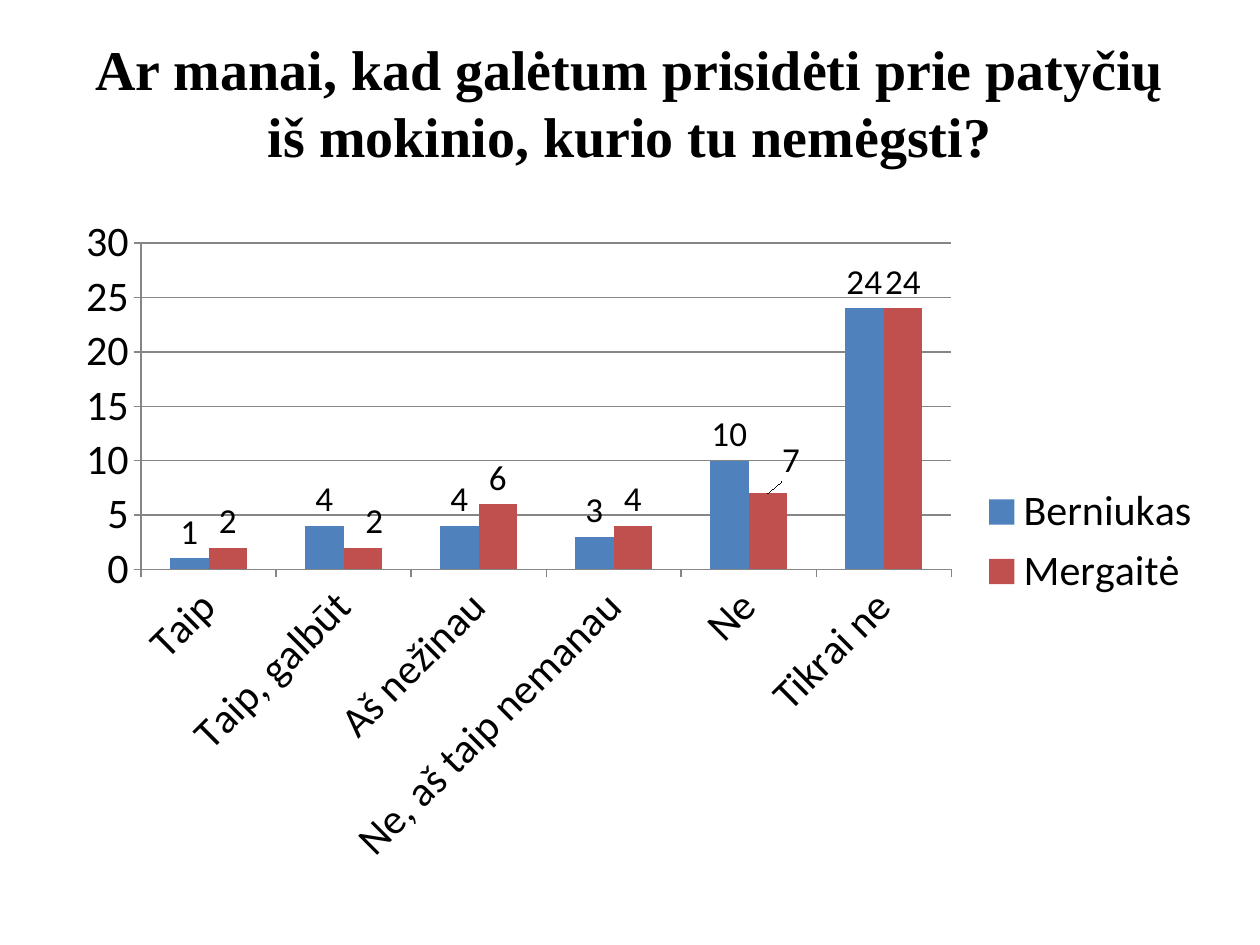
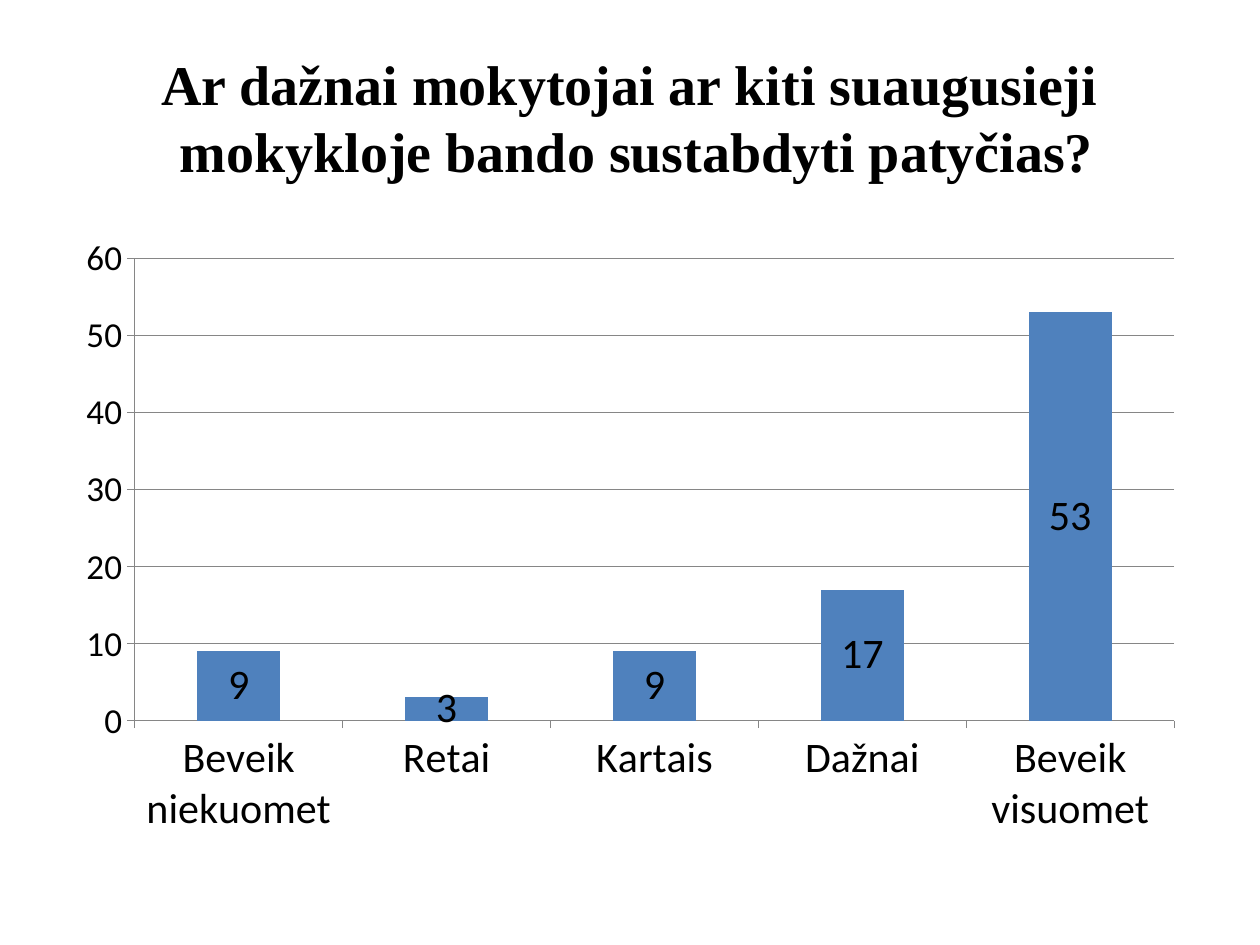
"""Two survey slides, each a bold title over a column chart."""
from lxml import etree
from pptx import Presentation
from pptx.chart.data import CategoryChartData
from pptx.dml.color import RGBColor
from pptx.enum.chart import XL_CHART_TYPE, XL_LABEL_POSITION, XL_LEGEND_POSITION, XL_TICK_MARK
from pptx.enum.text import MSO_ANCHOR, PP_ALIGN
from pptx.oxml.ns import qn
from pptx.util import Inches, Pt

BLACK = RGBColor(0, 0, 0)
GRAY = RGBColor(0x86, 0x86, 0x86)
BLUE = RGBColor(0x4F, 0x81, 0xBD)
RED = RGBColor(0xC0, 0x50, 0x4D)
CLUSTER = XL_CHART_TYPE.COLUMN_CLUSTERED
STACK = XL_CHART_TYPE.COLUMN_STACKED
ABOVE = XL_LABEL_POSITION.OUTSIDE_END
CENTER = XL_LABEL_POSITION.CENTER
RIGHT = XL_LEGEND_POSITION.RIGHT
OUT = XL_TICK_MARK.OUTSIDE
NONE = XL_TICK_MARK.NONE
MIDDLE = MSO_ANCHOR.MIDDLE
ALIGN = PP_ALIGN.CENTER


def add_title(slide, text, height):
    """Add the centred bold title."""
    box = slide.shapes.add_textbox(Inches(0.5), Inches(0.3), Inches(9), Inches(height))
    frame = box.text_frame
    frame.word_wrap = True
    frame.vertical_anchor = MIDDLE
    para = frame.paragraphs[0]
    para.text = text
    para.alignment = ALIGN
    para.font.name = "Times New Roman"
    para.font.size = Pt(32)
    para.font.bold = True
    para.font.color.rgb = BLACK


def make_layout(**parts):
    """Return a manual chart layout with the given settings in order."""
    layout = etree.Element(qn("c:layout"))
    manual = etree.SubElement(layout, qn("c:manualLayout"))
    for tag, value in parts.items():
        etree.SubElement(manual, qn("c:" + tag), val=str(value))
    return layout


def place_plot(chart, box, plot):
    """Fix the inner plot area, given in slide inches."""
    left, top, width, height = box
    x, y, w, h = plot
    area = chart.plots[0]._element.getparent()
    for old in area.findall(qn("c:layout")):
        area.remove(old)
    area.insert(0, make_layout(
        layoutTarget="inner", xMode="edge", yMode="edge",
        x=(x - left) / width, y=(y - top) / height, w=w / width, h=h / height))


def style_axis(axis, size):
    """Give an axis its gray line, outer ticks and text size."""
    axis.major_tick_mark = OUT
    axis.minor_tick_mark = NONE
    axis.tick_labels.font.size = Pt(size)
    axis.format.line.color.rgb = GRAY
    axis.format.line.width = Pt(0.75)


def add_chart(slide, kind, box, plot, cats, series, colors, size, label, spot):
    """Add a column chart with value labels."""
    data = CategoryChartData()
    data.categories = cats
    for name, values in series.items():
        data.add_series(name, values)
    frame = slide.shapes.add_chart(kind, *map(Inches, box), data)
    chart = frame.chart
    chart.has_title = False
    chart.has_legend = False
    chart.font.name = "Calibri"
    chart.font.size = Pt(10)
    chart.font.color.rgb = BLACK
    style_axis(chart.category_axis, 24)
    style_axis(chart.value_axis, size)
    chart.value_axis.has_major_gridlines = True
    grid = chart.value_axis.major_gridlines.format.line
    grid.color.rgb = GRAY
    grid.width = Pt(0.75)
    bars = chart.plots[0]
    bars.gap_width = 150
    bars.vary_by_categories = False
    for item, color in zip(bars.series, colors):
        item.format.fill.solid()
        item.format.fill.fore_color.rgb = color
        item.invert_if_negative = False
        labels = item.data_labels
        labels.show_value = True
        labels.position = spot
        labels.font.size = Pt(label)
    place_plot(chart, box, plot)
    return chart


def add_legend(chart):
    """Add the legend at the right."""
    chart.has_legend = True
    chart.legend.position = RIGHT
    chart.legend.include_in_layout = False
    chart.legend.font.size = Pt(24)


def shift_label(series, index, x, y):
    """Move one value label by a share of the chart size."""
    label = series.points[index].data_label
    label.position = ABOVE
    label.font.size = Pt(20)
    for node in series._element.iter(qn("c:dLbl")):
        if node.find(qn("c:idx")).get("val") == str(index):
            node.insert(1, make_layout(x=x, y=y))


def main():
    """Build and save both slides."""
    deck = Presentation()
    deck.slide_width, deck.slide_height = Inches(10), Inches(7.5)
    blank = deck.slide_layouts[6]

    slide = deck.slides.add_slide(blank)
    add_title(slide, "Ar manai, kad galėtum prisidėti prie patyčių "
                     "iš mokinio, kurio tu nemėgsti?", 1.01)
    chart = add_chart(
        slide, CLUSTER, (0.5, 1.62, 9.15, 5.36), (1.12, 1.93, 6.43, 2.59),
        ["Taip", "Taip, galbūt", "Aš nežinau", "Ne, aš taip nemanau", "Ne", "Tikrai ne"],
        {"Berniukas": (1, 4, 4, 3, 10, 24), "Mergaitė": (2, 2, 6, 4, 7, 24)},
        (BLUE, RED), 24, 20, ABOVE)
    add_legend(chart)
    body = chart.category_axis._element.find(qn("c:txPr")).find(qn("a:bodyPr"))
    body.set("rot", "-2700000")
    girls = chart.plots[0].series[1]
    shift_label(girls, 1, 0.01, 0)
    shift_label(girls, 4, 0.02, -0.01)

    slide = deck.slides.add_slide(blank)
    add_title(slide, "Ar dažnai mokytojai ar kiti suaugusieji\v"
                     " mokykloje bando sustabdyti patyčias?", 1.25)
    chart = add_chart(
        slide, STACK, (0.51, 1.78, 9, 4.95), (1.07, 2.05, 8.25, 3.67),
        ["Beveik niekuomet", "Retai", "Kartais", "Dažnai", "Beveik visuomet"],
        {"Series 1": (9, 3, 9, 17, 53)}, (BLUE,), 20, 24, CENTER)
    chart.plots[0].overlap = 100

    deck.save("out.pptx")


if __name__ == "__main__":
    main()
